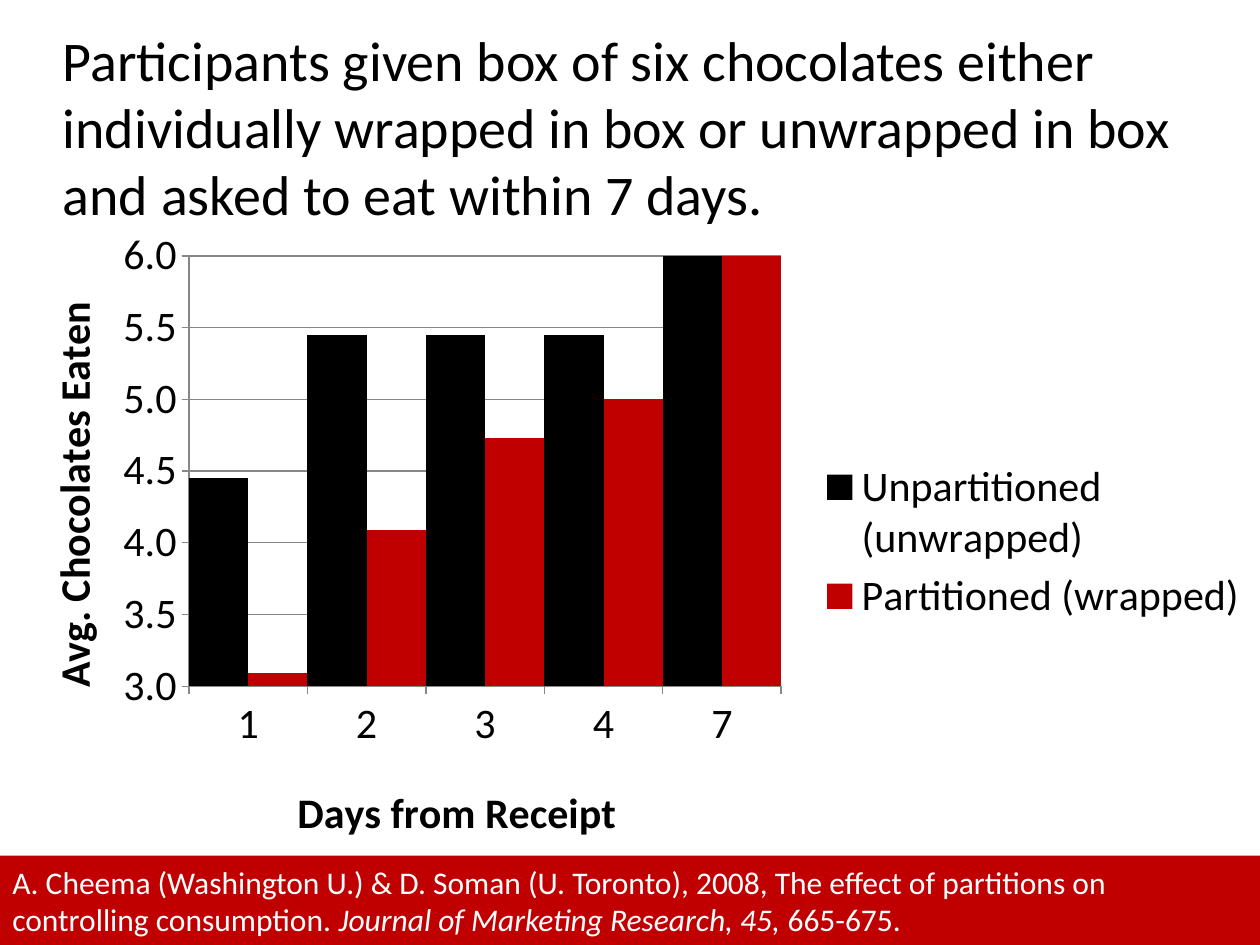
import pptx
import pptx.chart.data
import pptx.dml.color
import pptx.enum.chart
import pptx.enum.shapes
import pptx.enum.text
import pptx.oxml
import pptx.oxml.ns
import pptx.util

BLACK, WHITE, RED, GREY = "000000", "FFFFFF", "C00000", "878787"


def color(hex_string):
    return pptx.dml.color.RGBColor.from_string(hex_string)


def paint(fill, hex_string):
    fill.solid()
    fill.fore_color.rgb = color(hex_string)


def set_layout(element, index, inner=False, **shares):
    """Place a chart part by shares of the chart; index is its slot in the schema."""
    for old in element.findall(pptx.oxml.ns.qn("c:layout")):
        element.remove(old)
    target = '<c:layoutTarget val="inner"/>' if inner else ""
    modes = "".join(f'<c:{side}Mode val="edge"/>' for side in "xy")
    values = "".join(f'<c:{key} val="{share}"/>' for key, share in shares.items())
    element.insert(index, pptx.oxml.parse_xml(
        f'<c:layout {pptx.oxml.ns.nsdecls("c")}><c:manualLayout>'
        f"{target}{modes}{values}</c:manualLayout></c:layout>"))


class SlideBuilder:
    """Holds the style and the current slide; boxes are shares of the slide's size."""

    font_name = "Calibri"
    chart_size = 24

    def __init__(self, presentation):
        self.width = presentation.slide_width
        self.height = presentation.slide_height
        self.slide = presentation.slides.add_slide(presentation.slide_layouts[6])

    def box(self, left, top, width, height):
        return (round(left * self.width), round(top * self.height),
                round(width * self.width), round(height * self.height))

    def style_font(self, font, size, hex_string, bold=None):
        font.name = self.font_name
        font.size = pptx.util.Pt(size)
        font.color.rgb = color(hex_string)
        font.bold = bold

    def fill_text(self, shape, runs, size, hex_string, anchor):
        """Fill the shape with one paragraph of (text, italic) runs."""
        frame = shape.text_frame
        frame.word_wrap = True
        frame.vertical_anchor = anchor
        paragraph = frame.paragraphs[0]
        paragraph.alignment = pptx.enum.text.PP_ALIGN.LEFT
        self.style_font(paragraph.font, size, hex_string)
        for text, italic in runs:
            run = paragraph.add_run()
            run.text = text
            if italic:
                run.font.italic = True

    def text(self, box, text, size):
        shape = self.slide.shapes.add_textbox(*self.box(*box))
        self.fill_text(shape, [(text, False)], size, BLACK,
                       pptx.enum.text.MSO_ANCHOR.TOP)

    def band(self, box, runs, size, fill):
        shape = self.slide.shapes.add_shape(
            pptx.enum.shapes.MSO_SHAPE.RECTANGLE, *self.box(*box))
        shape.shadow.inherit = False
        paint(shape.fill, fill)
        shape.line.fill.background()
        self.fill_text(shape, runs, size, WHITE, pptx.enum.text.MSO_ANCHOR.MIDDLE)

    def style_axis(self, axis, title, **title_place):
        """Style the axis and return the text frame of its title."""
        frame = axis.axis_title.text_frame
        frame.text = title
        self.style_font(frame.paragraphs[0].font, self.chart_size, BLACK, bold=True)
        set_layout(axis.axis_title._element, 1, **title_place)
        self.style_font(axis.tick_labels.font, self.chart_size, BLACK)
        axis.major_tick_mark = pptx.enum.chart.XL_TICK_MARK.OUTSIDE
        axis.format.line.color.rgb = color(GREY)
        return frame

    def column_chart(self, box, categories, series):
        """Draw clustered columns; series maps a name to (values, color)."""
        data = pptx.chart.data.CategoryChartData(number_format="0.0")
        data.categories = categories
        for name, (values, _) in series.items():
            data.add_series(name, values)
        chart = self.slide.shapes.add_chart(
            pptx.enum.chart.XL_CHART_TYPE.COLUMN_CLUSTERED, *self.box(*box), data).chart
        chart.has_title = False
        self.style_font(chart.font, self.chart_size, BLACK)

        plot = chart.plots[0]
        plot.gap_width = 0
        plot.overlap = 0
        plot.vary_by_categories = False
        for drawn, (_, fill) in zip(plot.series, series.values()):
            paint(drawn.format.fill, fill)
            drawn.invert_if_negative = False
        set_layout(chart._chartSpace.chart.plotArea, 0, inner=True,
                   x=0.15, y=0.06, w=0.47, h=0.67)

        self.style_axis(chart.category_axis, "Days from Receipt", x=0.23, y=0.87)
        value_axis = chart.value_axis
        frame = self.style_axis(value_axis, "Avg. Chocolates Eaten", x=0.03, y=0.12)
        body = frame._txBody.bodyPr
        body.set("rot", "-5400000")
        body.set("vert", "horz")
        value_axis.minimum_scale = 3
        value_axis.maximum_scale = 6
        value_axis.major_unit = 0.5
        value_axis.tick_labels.number_format = "0.0"
        value_axis.tick_labels.number_format_is_linked = False
        value_axis.has_major_gridlines = True
        value_axis.major_gridlines.format.line.color.rgb = color(GREY)

        chart.has_legend = True
        chart.legend.position = pptx.enum.chart.XL_LEGEND_POSITION.RIGHT
        chart.legend.include_in_layout = False
        self.style_font(chart.legend.font, self.chart_size, BLACK)
        set_layout(chart.legend._element, 1, x=0.65, y=0.37, w=0.34, h=0.27)


def main():
    presentation = pptx.Presentation()
    presentation.slide_width = pptx.util.Inches(10)
    presentation.slide_height = pptx.util.Inches(7.5)
    builder = SlideBuilder(presentation)

    builder.text(
        (0.04, 0.02, 0.9, 0.22),
        "Participants given box of six chocolates either individually wrapped in box "
        "or unwrapped in box and asked to eat within 7 days.", 32)
    builder.column_chart(
        (0, 0.23, 1, 0.68), ["1", "2", "3", "4", "7"],
        {"Unpartitioned (unwrapped)": ([4.45, 5.45, 5.45, 5.45, 6], BLACK),
         "Partitioned (wrapped)": ([3.09, 4.09, 4.73, 5, 6], RED)})
    band_top = 6.79 / 7.5
    builder.band(
        (0, band_top, 1, 1 - band_top),
        [("A. Cheema (Washington U.) & D. Soman (U. Toronto), 2008, The effect of "
          "partitions on controlling consumption. ", False),
         ("Journal of Marketing Research, 45, ", True),
         ("665-675.", False)], 18, RED)

    presentation.save("out.pptx")


if __name__ == "__main__":
    main()
